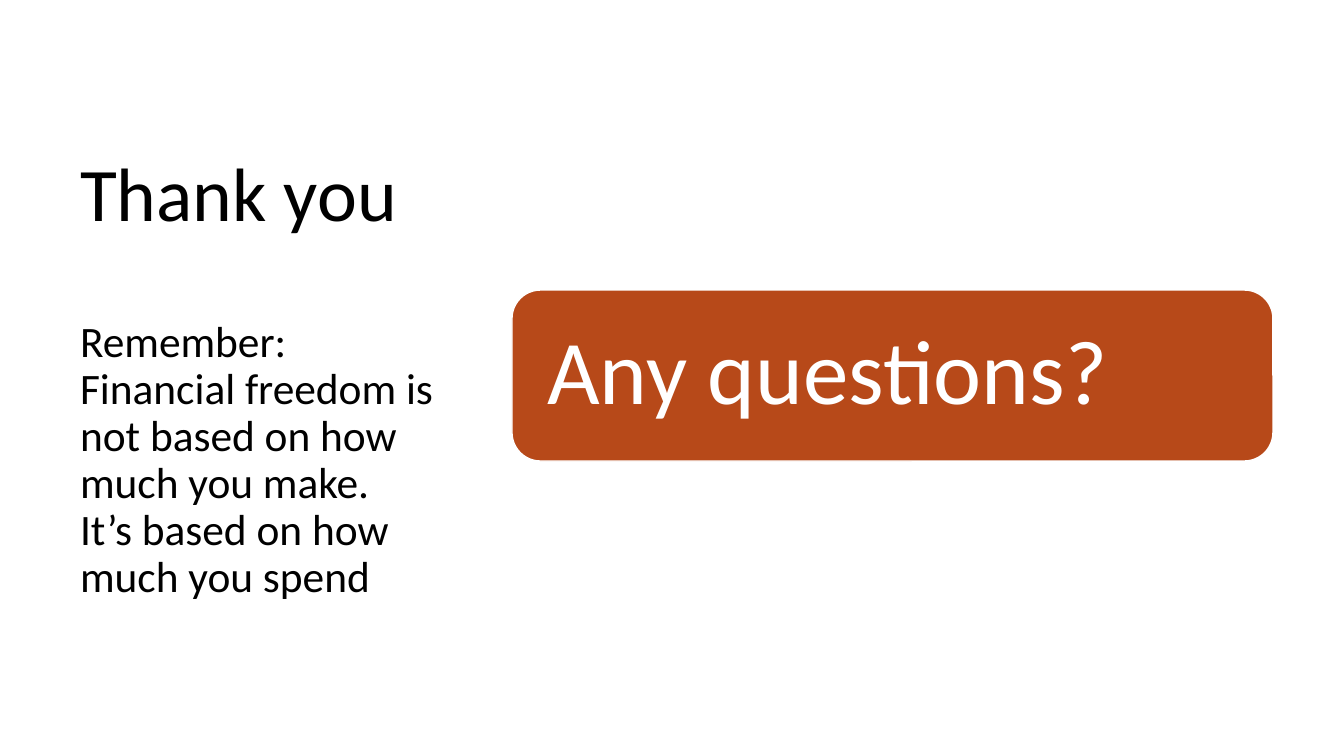
import pptx
import pptx.util
import pptx.dml.color
import pptx.enum.shapes
import pptx.enum.text

SLIDE = (1344, 756)
TITLE_BOX = (70, 71, 377, 616)
BANNER_BOX = (512, 290, 761, 171)
BANNER_INSET = 27
FONT = "Calibri"
COLORS = {"ink": "000000", "banner": "B74919", "paper": "FFFFFF"}
TITLE_LINES = [
    ("Thank you", 54, 0),
    ("Remember:", 31, 59),
    ("Financial freedom is not based on how much you make.", 31, 0),
    ("It’s based on how much you spend", 31, 0),
]
BANNER_LINES = [("Any questions?", 65, 0)]


def px(n):
    return pptx.util.Emu(round(n * 914400 / 100.8))


def color(name):
    return pptx.dml.color.RGBColor.from_string(COLORS[name])


def write(tf, lines, ink):
    tf.word_wrap = True
    tf.auto_size = pptx.enum.text.MSO_AUTO_SIZE.NONE
    tf.vertical_anchor = pptx.enum.text.MSO_ANCHOR.MIDDLE
    tf.text = "\n".join(text for text, size, before in lines)
    for p, (text, size, before) in zip(tf.paragraphs, lines):
        p.alignment = pptx.enum.text.PP_ALIGN.LEFT
        p.line_spacing = 0.9
        p.space_before = pptx.util.Pt(before)
        for r in p.runs:
            r.font.name = FONT
            r.font.size = pptx.util.Pt(size)
            r.font.color.rgb = color(ink)


def main():
    prs = pptx.Presentation()
    prs.slide_width, prs.slide_height = map(px, SLIDE)
    s = prs.slides.add_slide(prs.slide_layouts[5])

    title = s.shapes.title
    title.left, title.top, title.width, title.height = map(px, TITLE_BOX)
    write(title.text_frame, TITLE_LINES, "ink")

    banner = s.shapes.add_shape(
        pptx.enum.shapes.MSO_SHAPE.ROUNDED_RECTANGLE, *map(px, BANNER_BOX))
    banner.shadow.inherit = False
    banner.fill.solid()
    banner.fill.fore_color.rgb = color("banner")
    banner.line.color.rgb = color("paper")
    banner.line.width = pptx.util.Pt(1)
    tf = banner.text_frame
    tf.margin_left = tf.margin_right = px(BANNER_INSET)
    tf.margin_top = tf.margin_bottom = px(BANNER_INSET)
    write(tf, BANNER_LINES, "paper")

    prs.save("out.pptx")


if __name__ == "__main__":
    main()
